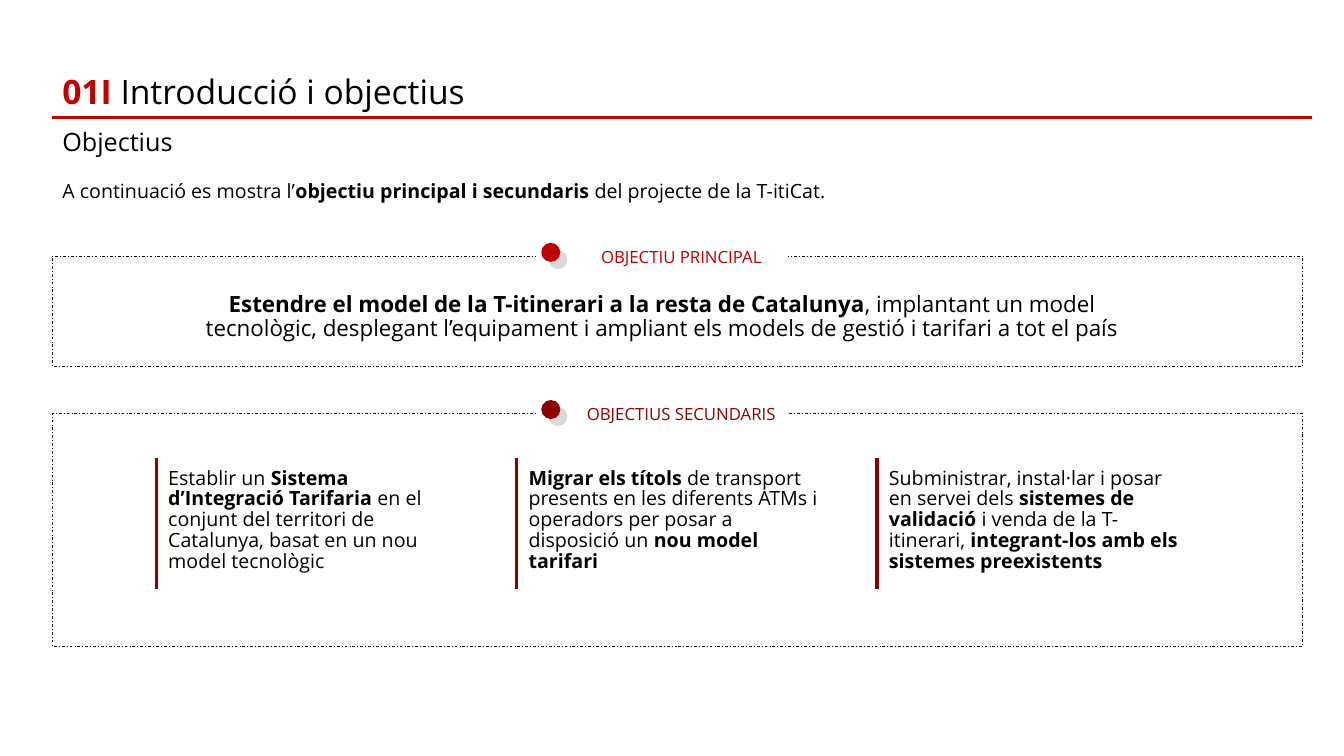
from lxml import etree
from pptx import Presentation
from pptx import util as u
from pptx.dml.color import RGBColor
from pptx.enum import dml, shapes, text
from pptx.oxml.ns import qn

RED = RGBColor(0xC0, 0x00, 0x00)
DARK_RED = RGBColor(0x90, 0x00, 0x00)
GREY = RGBColor(0xD9, 0xD9, 0xD9)
BLACK = RGBColor(0x00, 0x00, 0x00)
WHITE = RGBColor(0xFF, 0xFF, 0xFF)
LEFT, CENTER = text.PP_ALIGN.LEFT, text.PP_ALIGN.CENTER
TOP, MIDDLE = text.MSO_ANCHOR.TOP, text.MSO_ANCHOR.MIDDLE

deck = Presentation()
deck.slide_width, deck.slide_height = u.Inches(13.333), u.Inches(7.5)
slide = deck.slides.add_slide(deck.slide_layouts[3])


def write(box, runs, size, align=LEFT, anchor=TOP, spacing=1.0, insets=(0.25, 0.13, 0.25, 0.13)):
    frame = box.text_frame
    frame.word_wrap = True
    frame.auto_size = text.MSO_AUTO_SIZE.NONE
    frame.vertical_anchor = anchor
    frame.margin_left, frame.margin_top, frame.margin_right, frame.margin_bottom = map(u.Cm, insets)
    line = frame.paragraphs[0]
    line.alignment, line.line_spacing, line.space_before = align, spacing, u.Pt(0)
    for words, bold, color in runs:
        run = line.add_run()
        run.text = words
        run.font.name, run.font.size, run.font.bold = "Open Sans", u.Pt(size), bold
        run.font.color.rgb = color


def draw_line(x1, y1, x2, y2, color):
    rule = slide.shapes.add_connector(
        shapes.MSO_CONNECTOR.STRAIGHT, u.Cm(x1), u.Cm(y1), u.Cm(x2), u.Cm(y2))
    rule.line.color.rgb, rule.line.width = color, u.Pt(2.25)
    etree.SubElement(rule._element.spPr, qn("a:effectLst"))


heading, intro, subheading = slide.placeholders
for holder, top, height, size, anchor, runs in (
    (heading, 1.6, 1.4, 24, MIDDLE,
     [("01I ", True, RED), ("Introducció i objectius", False, BLACK)]),
    (intro, 4.39, 11.13, 14, TOP,
     [("A continuació es mostra l’", False, BLACK),
      ("objectiu principal i secundaris ", True, BLACK),
      ("del projecte de la T-itiCat.", False, BLACK)]),
    (subheading, 3.05, 1.19, 18, TOP, [("Objectius", False, BLACK)]),
):
    holder.left, holder.top, holder.width, holder.height = map(u.Cm, (1.32, top, 31.75, height))
    if holder is not heading:
        properties = holder.text_frame.paragraphs[0]._p.get_or_add_pPr()
        properties.set("marL", "0")
        properties.set("indent", "0")
        etree.SubElement(properties, qn("a:buNone"))
    write(holder, runs, size, anchor=anchor)

draw_line(1.32, 2.97, 33.07, 2.97, RED)

RECT, OVAL = shapes.MSO_SHAPE.RECTANGLE, shapes.MSO_SHAPE.OVAL
for caption, top, height, accent in (
    ("OBJECTIU PRINCIPAL", 6.45, 2.79, RED),
    ("OBJECTIUS SECUNDARIS", 10.41, 5.87, DARK_RED),
):
    for kind, x, y, w, h, fill, outline, weight in (
        (RECT, 1.32, 0, 31.5, height, None, BLACK, 0.5),
        (RECT, 13.54, -0.3, 6.27, 0.79, WHITE, WHITE, 2),
        (OVAL, 13.82, -0.15, 0.48, 0.48, GREY, None, 0),
        (OVAL, 13.64, -0.33, 0.48, 0.48, accent, None, 0),
    ):
        piece = slide.shapes.add_shape(kind, u.Cm(x), u.Cm(top + y), u.Cm(w), u.Cm(h))
        piece.shadow.inherit = False
        if fill is None:
            piece.fill.background()
            piece.line.dash_style = dml.MSO_LINE.DASH_DOT
        else:
            piece.fill.solid()
            piece.fill.fore_color.rgb = fill
        if outline is None:
            piece.line.fill.background()
        else:
            piece.line.color.rgb, piece.line.width = outline, u.Pt(weight)
    label = slide.shapes.add_textbox(u.Cm(14.33), u.Cm(top - 0.43), u.Cm(5.38), u.Cm(0.91))
    write(label, [(caption, False, accent)], 12, CENTER, MIDDLE, insets=(0.3, 0, 0, 0))

main_goal = slide.shapes.add_textbox(u.Cm(4.27), u.Cm(6.27), u.Cm(24.82), u.Cm(3.45))
write(main_goal, [
    ("Estendre el model de la T-itinerari a la resta de Catalunya", True, BLACK),
    (", implantant un model tecnològic, desplegant l’equipament i ampliant "
     "els models de gestió i tarifari a tot el país", False, BLACK),
], 16, CENTER, MIDDLE, 0.88, (0.4, 0.13, 0.4, 0.13))

secondary_goals = (
    [("Establir un ", False, BLACK),
     ("Sistema d’Integració Tarifaria ", True, BLACK),
     ("en el conjunt del territori de Catalunya, basat en un nou model tecnològic", False, BLACK)],
    [("Migrar els títols ", True, BLACK),
     ("de transport presents en les diferents ATMs i operadors per posar a disposició un ",
      False, BLACK),
     ("nou model tarifari", True, BLACK)],
    [("Subministrar, instal·lar i posar en servei dels ", False, BLACK),
     ("sistemes de validació ", True, BLACK),
     ("i venda de la T-itinerari, ", False, BLACK),
     ("integrant-los amb els sistemes preexistents", True, BLACK)],
)
for column, runs in enumerate(secondary_goals):
    x = 3.94 + 9.08 * column
    goal = slide.shapes.add_textbox(u.Cm(x + 0.2), u.Cm(11.53), u.Cm(7.6), u.Cm(3.3))
    write(goal, runs, 14, spacing=0.88, insets=(0.1, 0.28, 0.1, 0.1))
    draw_line(x, 11.53, x, 14.83, DARK_RED)

deck.save("out.pptx")
